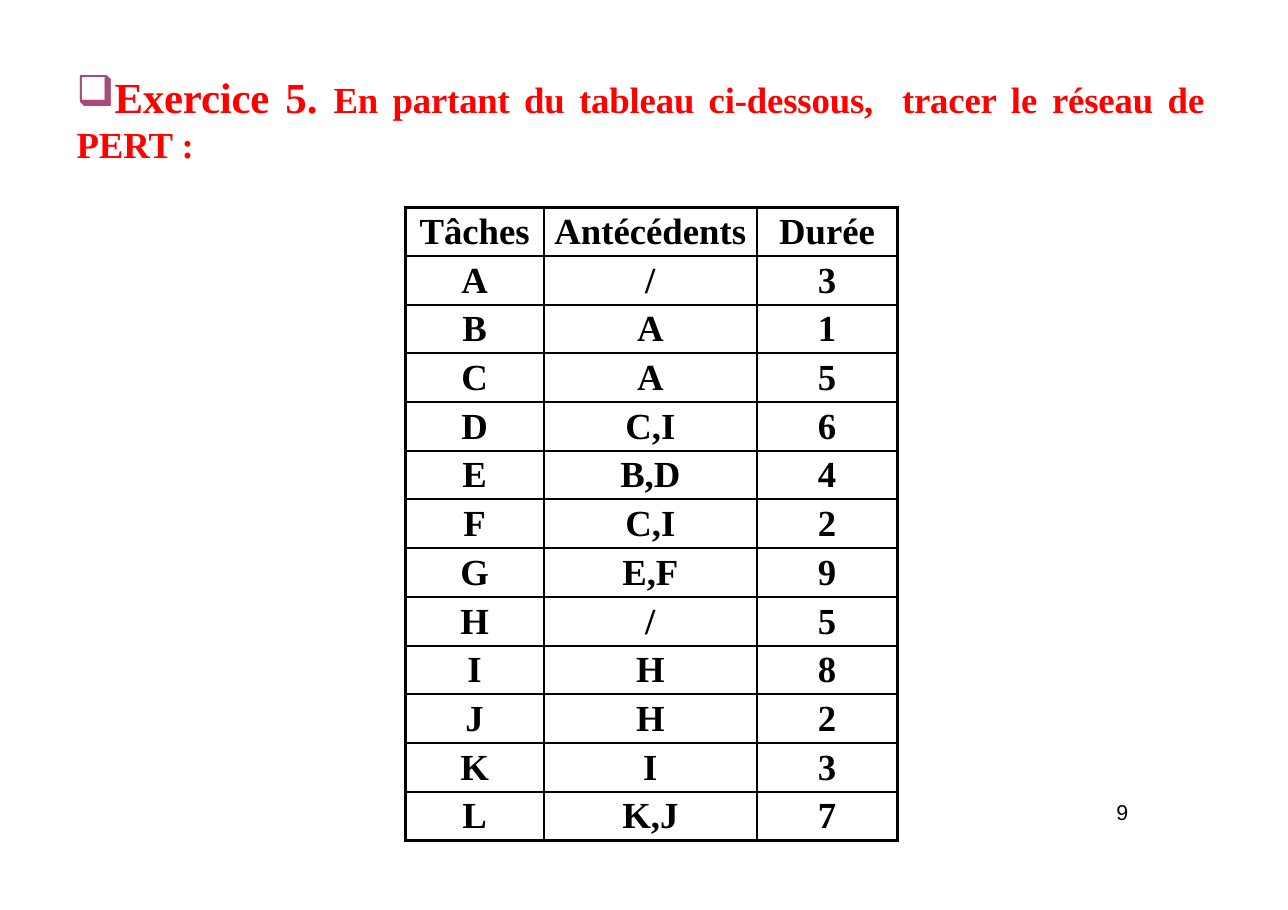
import pptx
import pptx.dml.color
import pptx.enum.text
import pptx.oxml
import pptx.oxml.ns
import pptx.util

Pt = pptx.util.Pt
ALIGN = pptx.enum.text.PP_ALIGN
NAMESPACE = pptx.oxml.ns.nsdecls("a")

TASKS = [
    ("Tâches", "Antécédents", "Durée"),
    ("A", "/", "3"),
    ("B", "A", "1"),
    ("C", "A", "5"),
    ("D", "C,I", "6"),
    ("E", "B,D", "4"),
    ("F", "C,I", "2"),
    ("G", "E,F", "9"),
    ("H", "/", "5"),
    ("I", "H", "8"),
    ("J", "H", "2"),
    ("K", "I", "3"),
    ("L", "K,J", "7"),
]


def color(hex_string):
    return pptx.dml.color.RGBColor.from_string(hex_string)


class SlideBuilder:
    serif, sans = "Times New Roman", "Arial"
    ink, accent, bullet_color = "000000", "FF0000", "AB4979"
    outer_line, inner_line = 2.25, 1.5

    def __init__(self, presentation):
        self.slide = presentation.slides.add_slide(presentation.slide_layouts[6])

    def format_run(self, run, size, font, hex_color, bold=False, spacing=0):
        run.font.size = Pt(size)
        run.font.name = font
        run.font.bold = bold
        run.font.color.rgb = color(hex_color)
        if spacing:
            run.font._element.set("spc", str(round(spacing * 100)))

    def text_box(self, left, top, width, height, runs, font, hex_color,
                 bold=False, align=ALIGN.LEFT):
        """Place one paragraph; runs are (text, size, letter spacing)."""
        shape = self.slide.shapes.add_textbox(Pt(left), Pt(top), Pt(width), Pt(height))
        frame = shape.text_frame
        frame.word_wrap = True
        frame.auto_size = pptx.enum.text.MSO_AUTO_SIZE.SHAPE_TO_FIT_TEXT
        frame.margin_left = frame.margin_right = frame.margin_bottom = 0
        frame.margin_top = Pt(0.7)
        paragraph = frame.paragraphs[0]
        paragraph.alignment = align
        paragraph.space_before = Pt(1)
        for text, size, spacing in runs:
            run = paragraph.add_run()
            run.text = text
            self.format_run(run, size, font, hex_color, bold, spacing)
        properties = paragraph._p.get_or_add_pPr()
        properties.set("marL", str(Pt(1)))
        properties.set("indent", "0")
        return paragraph

    def bullet(self, paragraph, character):
        properties = paragraph._p.get_or_add_pPr()
        for xml in (
            f'<a:buClr {NAMESPACE}><a:srgbClr val="{self.bullet_color}"/></a:buClr>',
            f'<a:buChar {NAMESPACE} char="{character}"/>',
        ):
            properties.append(pptx.oxml.parse_xml(xml))

    def cell_borders(self, cell, widths):
        """Draw the left, right, top and bottom lines of a cell."""
        properties = cell._tc.get_or_add_tcPr()
        for index, (side, width) in enumerate(zip("LRTB", widths)):
            properties.insert(index, pptx.oxml.parse_xml(
                f'<a:ln{side} {NAMESPACE} w="{Pt(width)}"><a:solidFill>'
                f'<a:srgbClr val="{self.ink}"/></a:solidFill></a:ln{side}>'))

    def table(self, left, top, column_widths, row_height, rows):
        last_row, last_column = len(rows) - 1, len(column_widths) - 1
        table = self.slide.shapes.add_table(
            len(rows), len(column_widths), Pt(left), Pt(top),
            Pt(sum(column_widths)), Pt(row_height * len(rows))).table
        table.first_row = table.horz_banding = False
        for column, width in zip(table.columns, column_widths):
            column.width = Pt(width)
        for r, values in enumerate(rows):
            table.rows[r].height = Pt(row_height)
            for c, value in enumerate(values):
                cell = table.cell(r, c)
                cell.margin_left = cell.margin_right = cell.margin_bottom = 0
                cell.margin_top = Pt(2.9)
                cell.fill.background()
                paragraph = cell.text_frame.paragraphs[0]
                paragraph.text = value
                paragraph.alignment = ALIGN.CENTER
                paragraph.space_before = Pt(3)
                self.format_run(paragraph.runs[0], 24, self.serif, self.ink, bold=True)
                on_edge = (c == 0, c == last_column, r == 0, r == last_row)
                self.cell_borders(cell, [
                    self.outer_line if edge else self.inner_line for edge in on_edge])


def main():
    presentation = pptx.Presentation()
    presentation.slide_width = Pt(841.7)
    presentation.slide_height = Pt(594.7)
    builder = SlideBuilder(presentation)

    # Page number
    builder.text_box(728.6, 521.3, 10.1, 18.7, [("9", 14, 0)],
                     builder.sans, builder.ink)

    # Exercise statement
    statement = [
        ("Exercice ", 28, -0.1),
        ("5. ", 28, 0),
        ("En partant du tableau ci-dessous,  tracer ", 24, -0.1),
        ("le ", 24, 0),
        ("réseau ", 24, -0.1),
        ("de PERT :", 24, 0),
    ]
    paragraph = builder.text_box(49, 45.4, 738, 64, statement, builder.serif,
                                 builder.accent, bold=True, align=ALIGN.JUSTIFY)
    builder.bullet(paragraph, "❑")

    # Task table
    builder.table(265, 135.4, [90.3, 139.4, 91.7], 31.85, TASKS)

    presentation.save("out.pptx")


if __name__ == "__main__":
    main()
